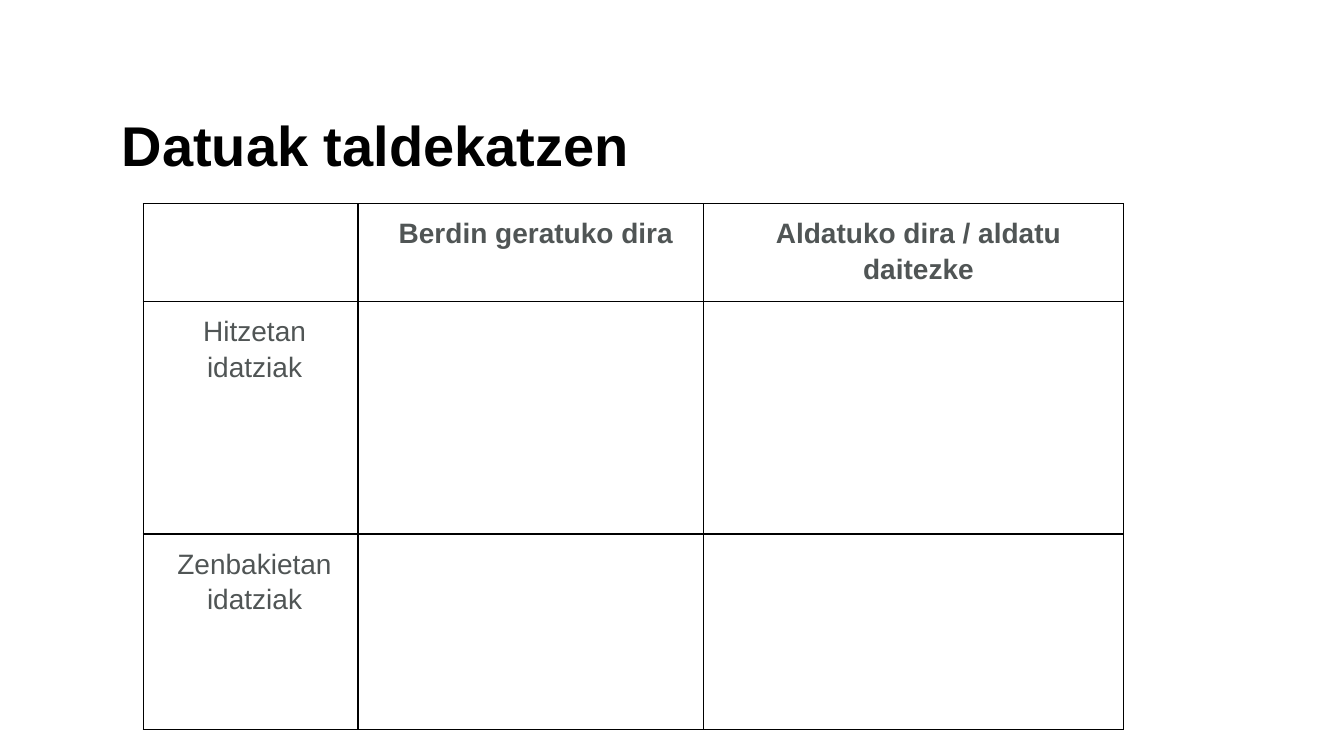
from lxml import etree
from pptx import Presentation
from pptx.dml.color import RGBColor
from pptx.enum import text
from pptx.oxml import ns
from pptx.util import Inches, Pt

TITLE = "Datuak taldekatzen"
GRID = [
    ["", "Berdin geratuko dira", "Aldatuko dira / aldatu daitezke"],
    ["Hitzetan idatziak", "", ""],
    ["Zenbakietan idatziak", "", ""],
]
COLUMN_WIDTHS = [2.13, 3.43, 4.16]
ROW_HEIGHTS = [0.91, 2.31, 1.94]
BLACK, GREY = "000000", "505555"


def color(value):
    return RGBColor.from_string(value)


def write(frame, wording, size=20, ink=GREY, bold=False, spacing=1.15,
          align=text.PP_ALIGN.CENTER, indent=0):
    frame.word_wrap = True
    line = frame.paragraphs[0]
    line.alignment = align
    line.line_spacing = spacing
    properties = line._p.get_or_add_pPr()
    properties.set("marL", str(Inches(indent)))
    properties.set("indent", "0")
    run = line.add_run()
    run.text = wording
    run.font.name = "Arial"
    run.font.size = Pt(size)
    run.font.bold = bold
    run.font.color.rgb = color(ink)


def add_borders(cell):
    properties = cell._tc.get_or_add_tcPr()
    for position, side in enumerate(("lnL", "lnR", "lnT", "lnB")):
        border = etree.Element(ns.qn("a:" + side), w=str(Pt(1)))
        fill = etree.SubElement(border, ns.qn("a:solidFill"))
        etree.SubElement(fill, ns.qn("a:srgbClr"), val=BLACK)
        properties.insert(position, border)


deck = Presentation()
deck.slide_width, deck.slide_height = Inches(13.33), Inches(7.5)
slide = deck.slides.add_slide(deck.slide_layouts[6])

title = slide.shapes.add_textbox(Inches(1.11), Inches(1), Inches(11.68), Inches(0.8))
write(title.text_frame, TITLE, size=40, ink=BLACK, bold=True, spacing=1.07,
      align=text.PP_ALIGN.LEFT)

table = slide.shapes.add_table(
    len(GRID), len(GRID[0]), Inches(1.42), Inches(2.02),
    Inches(sum(COLUMN_WIDTHS)), Inches(sum(ROW_HEIGHTS))).table
table.first_row = table.horz_banding = False
for column, width in zip(table.columns, COLUMN_WIDTHS):
    column.width = Inches(width)
for row, height in zip(table.rows, ROW_HEIGHTS):
    row.height = Inches(height)

for r, wordings in enumerate(GRID):
    for c, wording in enumerate(wordings):
        cell = table.cell(r, c)
        cell.margin_left = cell.margin_right = Inches(0.07)
        cell.margin_top = cell.margin_bottom = Inches(0.1)
        cell.fill.background()
        add_borders(cell)
        if wording:
            heading = r == 0
            write(cell.text_frame, wording, bold=heading,
                  indent=0.1 if heading else 0.08)

deck.save("out.pptx")
